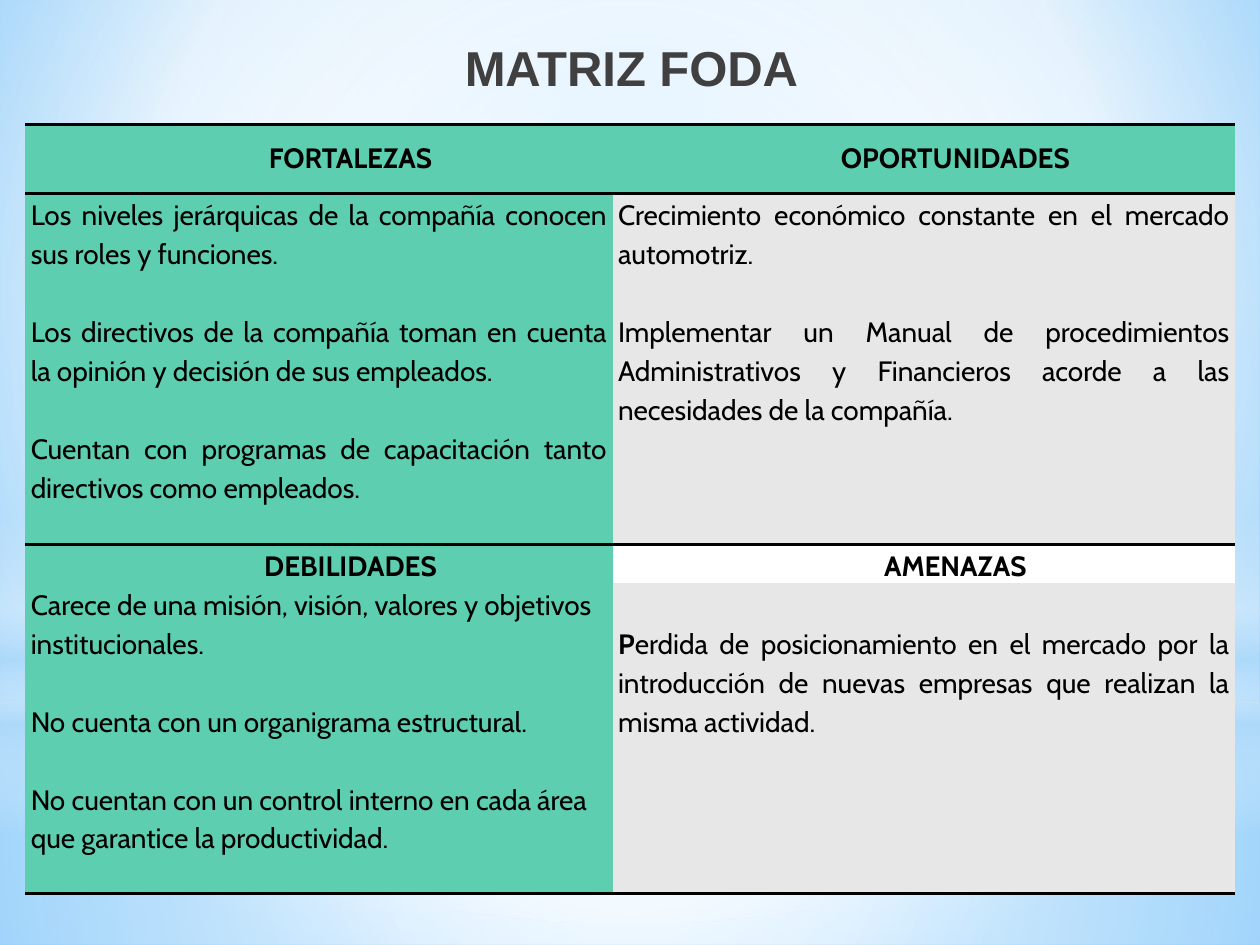
from dataclasses import dataclass

from lxml.etree import SubElement
from pptx import Presentation
from pptx.dml.color import RGBColor
from pptx.enum.shapes import MSO_SHAPE
from pptx.enum.text import MSO_ANCHOR, PP_ALIGN
from pptx.oxml.ns import qn
from pptx.util import Cm, Pt


@dataclass(frozen=True)
class Theme:
    title_font: str = "Arial"
    body_font: str = "Cabin"
    title_size: int = 28
    body_size: int = 16
    title_color: str = "404040"
    ink: str = "000000"
    green: str = "5DCEAF"
    gray: str = "E7E7E7"
    white: str = "FFFFFF"
    mist: str = "B4DCFA"
    sky: str = "9ED5FF"
    deep_sky: str = "5BB9FF"


THEME = Theme()
NO_STYLE_NO_GRID = "{2D5ABB26-0587-4C30-8999-92F81FD0307C}"
CENTERED_RECT = (50, 50, 50, 50)

STRENGTHS = [
    "Los niveles jerárquicas de la compañía conocen sus roles y funciones.",
    "Los directivos de la compañía toman en cuenta la opinión y decisión de sus empleados.",
    "Cuentan con programas de capacitación tanto directivos como empleados.",
]
OPPORTUNITIES = [
    "Crecimiento económico constante en el mercado automotriz.",
    "Implementar un Manual de procedimientos Administrativos y Financieros "
    "acorde a las necesidades de la compañía.",
]
WEAKNESSES = [
    "Carece de una misión, visión, valores y objetivos institucionales.",
    "No cuenta con un organigrama estructural.",
    "No cuentan con un control interno en cada área que garantice la productividad.",
]
THREATS = [
    "Perdida de posicionamiento en el mercado por la introducción de nuevas "
    "empresas que realizan la misma actividad.",
]


def apply_gradient(parent, stops, center=None):
    """Replace the solid fill in parent; stops are (position, color, opacity)."""
    solid = parent.find(qn("a:solidFill"))
    gradient = SubElement(parent, qn("a:gradFill"), rotWithShape="1")
    parent.replace(solid, gradient)
    stop_list = SubElement(gradient, qn("a:gsLst"))
    for position, color, opacity in stops:
        stop = SubElement(stop_list, qn("a:gs"), pos=str(position * 1000))
        color_element = SubElement(stop, qn("a:srgbClr"), val=color)
        if opacity < 100:
            SubElement(color_element, qn("a:alpha"), val=str(opacity * 1000))
    if center:
        path = SubElement(gradient, qn("a:path"), path="circle")
        sides = {side: str(value * 1000) for side, value in zip("ltrb", center)}
        SubElement(path, qn("a:fillToRect"), **sides)
    else:
        SubElement(gradient, qn("a:lin"), ang="5400000", scaled="0")


def set_background(slide):
    slide.background.fill.solid()
    properties = slide.element.cSld.find(qn("p:bg")).find(qn("p:bgPr"))
    stops = [(0, THEME.sky, 100), (60, THEME.white, 100), (100, THEME.deep_sky, 100)]
    apply_gradient(properties, stops, (20, 10, 20, 60))


def add_glow(slide, kind, top, height, stops, center=CENTERED_RECT):
    shape = slide.shapes.add_shape(kind, 0, Cm(top), Cm(25.4), Cm(height))
    shape.shadow.inherit = False
    shape.line.fill.background()
    shape.fill.solid()
    apply_gradient(shape.element.spPr, stops, center)


def add_glows(slide):
    white, mist = THEME.white, THEME.mist
    add_glow(slide, MSO_SHAPE.RECTANGLE, 14.17, 4.88,
             [(0, white, 91), (37, white, 76), (100, mist, 79)])
    add_glow(slide, MSO_SHAPE.RECTANGLE, 0, 14.17,
             [(0, white, 89), (48, white, 62), (100, mist, 79)])
    add_glow(slide, MSO_SHAPE.RECTANGLE, 10.46, 6.35,
             [(0, white, 0), (29, white, 30), (45, mist, 40),
              (55, white, 26), (65, mist, 60), (100, white, 0)], center=None)
    add_glow(slide, MSO_SHAPE.OVAL, 4.45, 14.17, [(0, white, 100), (56, white, 0)])


def format_title(slide, text):
    title = slide.shapes.title
    title.left, title.top, title.width, title.height = Cm(1.3), Cm(0.53), Cm(22.86), Cm(1.75)
    frame = title.text_frame
    frame.text = text
    frame.vertical_anchor = MSO_ANCHOR.TOP
    frame.margin_top = Cm(0.23)
    paragraph = frame.paragraphs[0]
    paragraph.alignment = PP_ALIGN.CENTER
    set_font(paragraph.font, THEME.title_font, THEME.title_size, THEME.title_color, True)
    # Bring the title in front of the glows
    slide.shapes.element.append(title.element)


def set_font(font, name, size, color, bold):
    font.name, font.size, font.bold = name, Pt(size), bold
    font.color.rgb = RGBColor.from_string(color)


def style_cell(cell, color, borders=()):
    cell.margin_left = cell.margin_right = Cm(0.11)
    cell.margin_top = cell.margin_bottom = 0
    properties = cell._tc.get_or_add_tcPr()
    for side in borders:
        line = SubElement(properties, qn(f"a:ln{side}"), w=str(Pt(2)))
        fill = SubElement(line, qn("a:solidFill"))
        SubElement(fill, qn("a:srgbClr"), val=THEME.ink)
    cell.fill.solid()
    cell.fill.fore_color.rgb = RGBColor.from_string(color)


def format_paragraph(paragraph, alignment, bold, spacing=1.15):
    paragraph.alignment = alignment
    paragraph.line_spacing = spacing
    set_font(paragraph.font, THEME.body_font, THEME.body_size, THEME.ink, bold)


def write_heading(cell, text, spacing=1.15):
    paragraph = cell.text_frame.paragraphs[0]
    paragraph.text = text
    format_paragraph(paragraph, PP_ALIGN.CENTER, True, spacing)
    paragraph._p.get_or_add_pPr().set("marL", str(Cm(1.27)))


def write_items(cell, items, alignment, bold_letters=0):
    frame = cell.text_frame
    for index, item in enumerate(items):
        paragraph = frame.paragraphs[0] if index == 0 else frame.add_paragraph()
        format_paragraph(paragraph, alignment, False)
        if index:
            paragraph.space_before = Pt(22.3)
        if bold_letters:
            lead = paragraph.add_run()
            lead.text = item[:bold_letters]
            lead.font.bold = True
        paragraph.add_run().text = item[bold_letters:]


def add_matrix(slide):
    widths, heights = (11.84, 12.55), (1.4, 7.06, 0.79, 6.25)
    frame = slide.shapes.add_table(len(heights), len(widths), Cm(0.51), Cm(2.51),
                                   Cm(sum(widths)), Cm(sum(heights)))
    table = frame.table
    table._tbl.tblPr.find(qn("a:tableStyleId")).text = NO_STYLE_NO_GRID
    for column, width in zip(table.columns, widths):
        column.width = Cm(width)
    for row, height in zip(table.rows, heights):
        row.height = Cm(height)

    # Cell colors by row, and rules around the header and below the last row
    colors = [(THEME.green, THEME.green), (THEME.green, THEME.gray),
              (THEME.green, THEME.white), (THEME.green, THEME.gray)]
    borders = ["TB", "T", "", "B"]
    for row_index, (row_colors, sides) in enumerate(zip(colors, borders)):
        for column_index, color in enumerate(row_colors):
            style_cell(table.cell(row_index, column_index), color, sides)

    # Headings
    for column_index, text in enumerate(("FORTALEZAS", "OPORTUNIDADES")):
        write_heading(table.cell(0, column_index), text, 1.5)
    for column_index, text in enumerate(("DEBILIDADES", "AMENAZAS")):
        write_heading(table.cell(2, column_index), text)

    # Quadrants
    write_items(table.cell(1, 0), STRENGTHS, PP_ALIGN.JUSTIFY)
    write_items(table.cell(1, 1), OPPORTUNITIES, PP_ALIGN.JUSTIFY)
    write_items(table.cell(3, 0), WEAKNESSES, PP_ALIGN.LEFT)
    write_items(table.cell(3, 1), THREATS, PP_ALIGN.JUSTIFY, bold_letters=1)
    table.cell(3, 1).margin_top = Cm(0.79)


def main():
    presentation = Presentation()
    presentation.slide_width, presentation.slide_height = Cm(25.4), Cm(19.05)
    slide = presentation.slides.add_slide(presentation.slide_layouts[5])
    set_background(slide)
    add_glows(slide)
    format_title(slide, "MATRIZ FODA")
    add_matrix(slide)
    presentation.save("out.pptx")


if __name__ == "__main__":
    main()
